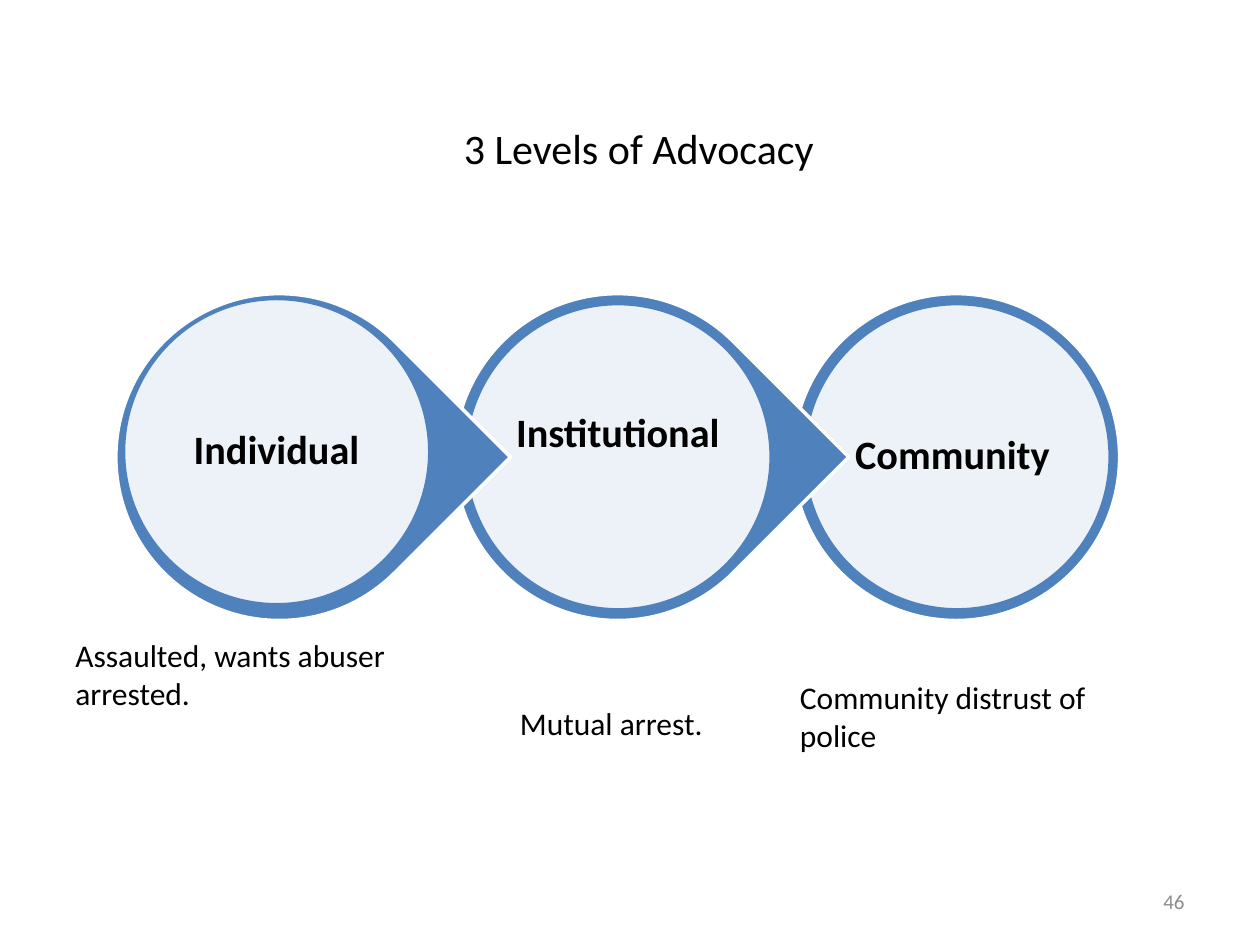
from pptx import Presentation
from pptx.dml.color import RGBColor
from pptx.enum.shapes import MSO_SHAPE as SHAPE
from pptx.enum.text import MSO_ANCHOR as ANCHOR, MSO_AUTO_SIZE as FIT, PP_ALIGN as ALIGN
from pptx.oxml.ns import qn
from pptx.util import Pt

BLUE = RGBColor(0x4F, 0x81, 0xBD)
WHITE = RGBColor(0xFF, 0xFF, 0xFF)
BLACK = RGBColor(0, 0, 0)
GRAY = RGBColor(0x8C, 0x8C, 0x8C)

deck = Presentation()
deck.slide_width, deck.slide_height = Pt(720), Pt(540)
slide = deck.slides.add_slide(deck.slide_layouts[5])


def write(box, text, size, color=BLACK, bold=False, align=ALIGN.LEFT, anchor=ANCHOR.TOP):
    frame = box.text_frame
    frame.text = text
    frame.word_wrap = True
    frame.auto_size = FIT.NONE
    frame.vertical_anchor = anchor
    for para in frame.paragraphs:
        para.alignment = align
        font = para.runs[0].font
        font.name, font.size, font.bold = "Calibri", Pt(size), bold
        font.color.rgb = color
    return frame


def draw(kind, left, top, size, fill, line):
    shape = slide.shapes.add_shape(kind, Pt(left), Pt(top), Pt(size), Pt(size))
    shape.shadow.inherit = False
    shape.fill.solid()
    shape.fill.fore_color.rgb = fill
    shape.line.color.rgb = line
    shape.line.width = Pt(2)
    return shape


# Title
title = slide.shapes.title
title.left, title.top, title.width, title.height = Pt(257.8), Pt(66.2), Pt(221.8), Pt(36)
write(title, "3 Levels of Advocacy", 24)

# Chain of levels, last one at the back: name, disc left and top, label shift
STEP, START, TOP = 193.4, 66.2, 167.8
DISC, LABEL = 175, 124.6
levels = [
    ("Individual", 70.6, 170.6, 0, 0),
    ("Institutional", 265.7, 173.5, 0, -12.5),
    ("Community", 459.4, 173.5, -2.5, 0),
]
for i, (name, left, top, dx, dy) in reversed(list(enumerate(levels))):
    last = i == len(levels) - 1
    kind = SHAPE.OVAL if last else SHAPE.TEAR
    outer = draw(kind, START + i * STEP, TOP, 186.8, BLUE, WHITE)
    if not last:
        outer.adjustments[0] = 1
        outer.rotation = 45

    disc = draw(SHAPE.OVAL, left, top, DISC, WHITE, BLUE)
    tone = disc.fill._xPr.find(qn("a:solidFill"))[0]
    tone.makeelement(qn("a:alpha"), {})
    alpha = tone.makeelement(qn("a:alpha"), {"val": "90000"})
    tone.append(alpha)

    gap = (DISC - LABEL) / 2
    label = slide.shapes.add_textbox(
        Pt(left + gap + dx), Pt(top + gap + dy), Pt(LABEL), Pt(LABEL))
    frame = write(label, name, 23, bold=True, align=ALIGN.CENTER, anchor=ANCHOR.MIDDLE)
    frame.margin_left = frame.margin_right = Pt(2)
    frame.margin_top = frame.margin_bottom = Pt(2)
    frame.paragraphs[0].line_spacing = 0.9

# Example under each level
notes = [
    ("Assaulted, wants abuser arrested.", 36, 360, 258, 51),
    ("Mutual arrest.", 290, 399, 207, 29),
    ("Community distrust of\npolice", 450, 384, 240, 51),
]
for text, left, top, width, height in notes:
    box = slide.shapes.add_textbox(Pt(left), Pt(top), Pt(width), Pt(height))
    write(box, text, 18)

# Slide number
number = slide.shapes.add_textbox(Pt(516), Pt(500.5), Pt(168), Pt(28.8))
write(number, "46", 12, GRAY, align=ALIGN.RIGHT, anchor=ANCHOR.MIDDLE)

deck.save("out.pptx")
